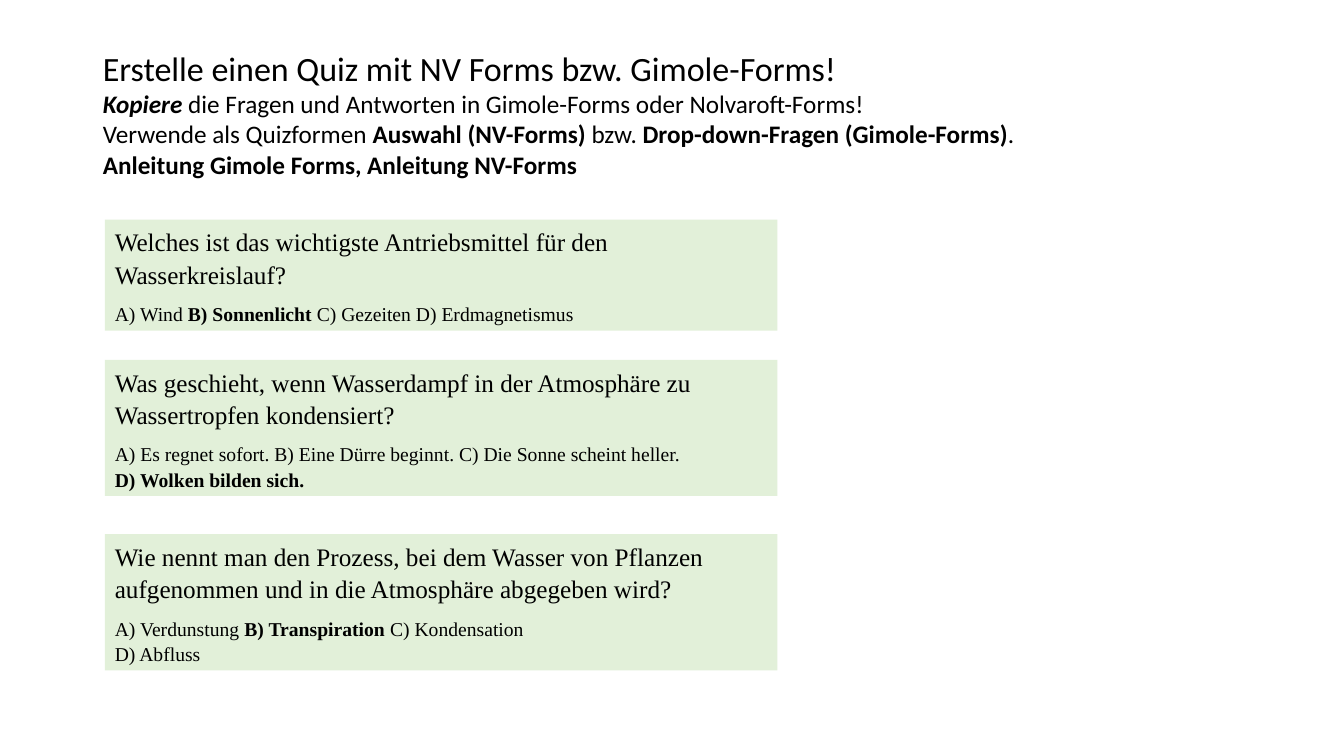
from copy import deepcopy
from dataclasses import dataclass

from pptx import Presentation
from pptx.dml.color import RGBColor
from pptx.enum.shapes import MSO_SHAPE
from pptx.enum.text import MSO_ANCHOR, MSO_AUTO_SIZE, PP_ALIGN
from pptx.util import Emu, Pt

PX = 9144  # 100 px per inch
BLACK, PALE_GREEN = "000000", "E2F0D9"
CARD_LEFT, CARD_WIDTH = 104, 667


@dataclass
class Span:
    text: str
    bold: bool = False
    italic: bool = False
    size: float | None = None


@dataclass
class Question:
    top: int
    height: int
    wording: str
    answers: list[Span]


INSTRUCTIONS = [
    Span("Erstelle einen Quiz mit NV Forms bzw. Gimole-Forms!\n", size=24.3),
    Span("Kopiere", bold=True, italic=True),
    Span(" die Fragen und Antworten in Gimole-Forms oder Nolvaroft-Forms! \n"
         "Verwende als Quizformen "),
    Span("Auswahl (NV-Forms) ", bold=True),
    Span("bzw. "),
    Span("Drop-down-Fragen (Gimole-Forms)", bold=True),
    Span(".\n"),
    Span("Anleitung Gimole Forms, Anleitung NV-Forms", bold=True),
]

QUESTIONS = [
    Question(218, 110,
             "Welches ist das wichtigste Antriebsmittel für den Wasserkreislauf?",
             [Span("A) Wind "), Span("B) Sonnenlicht ", bold=True),
              Span("C) Gezeiten D) Erdmagnetismus")]),
    Question(357, 135,
             "Was geschieht, wenn Wasserdampf in der Atmosphäre zu "
             "Wassertropfen kondensiert?",
             [Span("A) Es regnet sofort. B) Eine Dürre beginnt. "
                   "C) Die Sonne scheint heller. \n"),
              Span("D) Wolken bilden sich.", bold=True)]),
    Question(530, 135,
             "Wie nennt man den Prozess, bei dem Wasser von Pflanzen "
             "aufgenommen und in die Atmosphäre abgegeben wird?",
             [Span("A) Verdunstung "), Span("B) Transpiration ", bold=True),
              Span("C) Kondensation \nD) Abfluss")]),
]


def px(length: int) -> Emu:
    return Emu(length * PX)


def rgb(colour: str) -> RGBColor:
    return RGBColor.from_string(colour)


def write(paragraph, spans: list[Span], *, font: str, size: float,
          before: float = 0, after: float = 0, spacing: float = 1.0) -> None:
    """Fill a paragraph; a newline in a span becomes a line break of its size."""
    paragraph.alignment = PP_ALIGN.LEFT
    paragraph.space_before, paragraph.space_after = Pt(before), Pt(after)
    paragraph.line_spacing = spacing
    for span in spans:
        for index, line in enumerate(span.text.split("\n")):
            if index:
                paragraph.add_line_break()
                paragraph._p[-1].append(deepcopy(run._r.rPr))
            if not line:
                continue
            run = paragraph.add_run()
            run.text = line
            run.font.name = font
            run.font.size = Pt(span.size or size)
            run.font.bold, run.font.italic = span.bold, span.italic
            run.font.color.rgb = rgb(BLACK)


def add_instructions(slide) -> None:
    title = slide.shapes.title
    title.left, title.top = px(92), px(40)
    title.width, title.height = px(1150), px(145)
    frame = title.text_frame
    frame.word_wrap = True
    frame.auto_size = MSO_AUTO_SIZE.NONE
    frame.vertical_anchor = MSO_ANCHOR.MIDDLE
    write(frame.paragraphs[0], INSTRUCTIONS, font="Calibri", size=18,
          before=6, after=18)


def add_question(slide, question: Question) -> None:
    card = slide.shapes.add_shape(
        MSO_SHAPE.RECTANGLE, px(CARD_LEFT), px(question.top),
        px(CARD_WIDTH), px(question.height))
    card.shadow.inherit = False
    card.fill.solid()
    card.fill.fore_color.rgb = rgb(PALE_GREEN)
    card.line.fill.background()
    frame = card.text_frame
    frame.word_wrap = True
    frame.auto_size = MSO_AUTO_SIZE.SHAPE_TO_FIT_TEXT
    frame.vertical_anchor = MSO_ANCHOR.TOP
    style = {"font": "Times New Roman", "after": 8, "spacing": 1.07}
    write(frame.paragraphs[0], [Span(question.wording)], size=18, **style)
    write(frame.add_paragraph(), question.answers, size=14, **style)


def main() -> None:
    deck = Presentation()
    deck.slide_width, deck.slide_height = px(1333), px(750)
    slide = deck.slides.add_slide(deck.slide_layouts[5])
    add_instructions(slide)
    for question in QUESTIONS:
        add_question(slide, question)
    deck.save("out.pptx")


if __name__ == "__main__":
    main()
